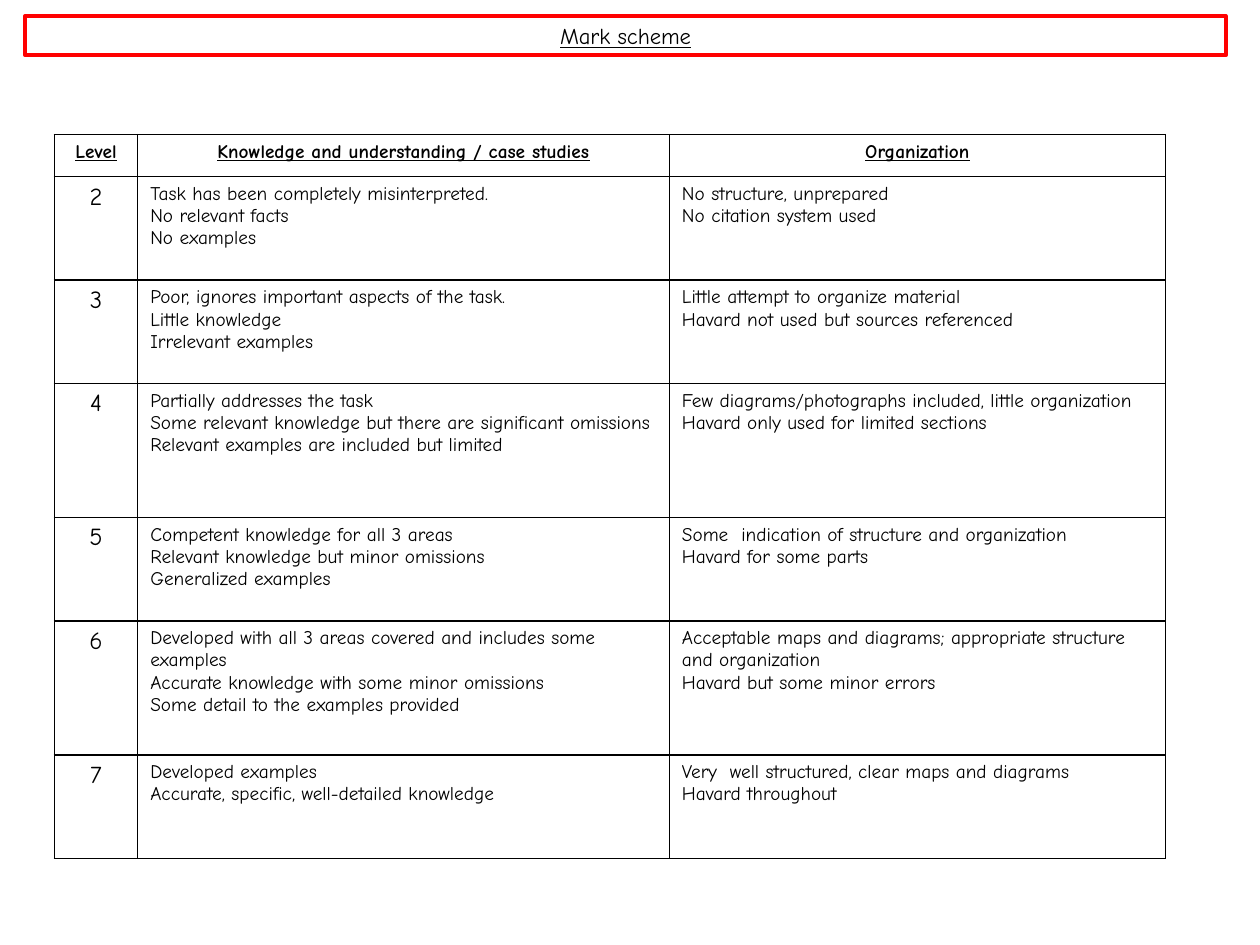
import dataclasses

import lxml.etree
import pptx
import pptx.dml.color
import pptx.enum.shapes
import pptx.enum.text
import pptx.oxml.ns
import pptx.slide
import pptx.table
import pptx.text.text
import pptx.util

Pt = pptx.util.Pt
Align = pptx.enum.text.PP_ALIGN


@dataclasses.dataclass(frozen=True)
class Theme:
    """Hold the colours, font and type sizes of the slide."""

    font: str = "Comic Neue"
    ink: str = "000000"
    frame: str = "FF0000"
    title_size: float = 12.9
    body_size: float = 11
    level_size: float = 14
    border_width: float = 1
    frame_width: float = 2.25


@dataclasses.dataclass(frozen=True)
class Band:
    """Describe one level of the mark scheme."""

    level: str
    height: float
    knowledge: tuple[str, ...]
    organization: tuple[str, ...]


THEME = Theme()
HEADINGS = ("Level", "Knowledge and understanding / case studies", "Organization")
COLUMN_WIDTHS = (47.7, 303.8, 283.5)
HEADING_HEIGHT = 24
SHORT, TALL = 59.1, 76.6
BANDS = (
    Band("2", SHORT,
         ("Task has been completely misinterpreted.", "No relevant facts", "No examples"),
         ("No structure, unprepared", "No citation system used")),
    Band("3", SHORT,
         ("Poor, ignores important aspects of the task.", "Little knowledge",
          "Irrelevant examples"),
         ("Little attempt to organize material", "Havard not used but sources referenced")),
    Band("4", TALL,
         ("Partially addresses the task",
          "Some relevant knowledge but there are significant omissions",
          "Relevant examples are included but limited"),
         ("Few diagrams/photographs included, little organization",
          "Havard only used for limited sections")),
    Band("5", SHORT,
         ("Competent knowledge for all 3 areas", "Relevant knowledge but minor omissions",
          "Generalized examples"),
         ("Some  indication of structure and organization", "Havard for some parts")),
    Band("6", TALL,
         ("Developed with all 3 areas covered and includes some examples",
          "Accurate knowledge with some minor omissions",
          "Some detail to the examples provided"),
         ("Acceptable maps and diagrams; appropriate structure and organization",
          "Havard but some minor errors")),
    Band("7", SHORT,
         ("Developed examples", "Accurate, specific, well-detailed knowledge"),
         ("Very  well structured, clear maps and diagrams", "Havard throughout")),
)


def write_text(frame: pptx.text.text.TextFrame, lines: tuple[str, ...], size: float,
               align: Align = Align.LEFT, bold: bool = False,
               underline: bool = False) -> None:
    """Write one formatted paragraph for each line."""
    frame.text = "\n".join(lines)
    for para in frame.paragraphs:
        para.alignment = align
        for span in para.runs:
            span.font.name = THEME.font
            span.font.size = Pt(size)
            span.font.bold = bold
            span.font.underline = underline
            span.font.color.rgb = pptx.dml.color.RGBColor.from_string(THEME.ink)


def style_cell(cell: pptx.table._Cell) -> None:
    """Clear the fill of a cell and rule its four sides."""
    properties = cell._tc.get_or_add_tcPr()
    qualified = pptx.oxml.ns.qn
    for side in ("a:lnL", "a:lnR", "a:lnT", "a:lnB"):
        line = lxml.etree.SubElement(properties, qualified(side),
                                     w=str(int(Pt(THEME.border_width))))
        fill = lxml.etree.SubElement(line, qualified("a:solidFill"))
        lxml.etree.SubElement(fill, qualified("a:srgbClr"), val=THEME.ink)
    cell.fill.background()


def draw_title(page: pptx.slide.Slide) -> None:
    """Draw the framed title across the top."""
    box = page.shapes.add_shape(pptx.enum.shapes.MSO_SHAPE.RECTANGLE,
                                Pt(14.4), Pt(9.2), Pt(686), Pt(22.5))
    box.shadow.inherit = False
    box.fill.background()
    box.line.color.rgb = pptx.dml.color.RGBColor.from_string(THEME.frame)
    box.line.width = Pt(THEME.frame_width)
    box.text_frame.vertical_anchor = pptx.enum.text.MSO_ANCHOR.MIDDLE
    write_text(box.text_frame, ("Mark scheme",), THEME.title_size, Align.CENTER,
               underline=True)


def draw_scheme(page: pptx.slide.Slide, bands: tuple[Band, ...]) -> None:
    """Draw the table of levels and their criteria."""
    heights = (HEADING_HEIGHT, *(band.height for band in bands))
    table = page.shapes.add_table(len(heights), len(COLUMN_WIDTHS), Pt(31), Pt(77),
                                  Pt(sum(COLUMN_WIDTHS)), Pt(sum(heights))).table
    table.first_row = table.horz_banding = False
    for column, width in zip(table.columns, COLUMN_WIDTHS):
        column.width = Pt(width)
    for row, height in zip(table.rows, heights):
        row.height = Pt(height)
    for cell in table.iter_cells():
        style_cell(cell)
    for column, heading in enumerate(HEADINGS):
        write_text(table.cell(0, column).text_frame, (heading,), THEME.body_size,
                   Align.CENTER, bold=True, underline=True)
    for row, band in enumerate(bands, start=1):
        write_text(table.cell(row, 0).text_frame, (band.level,), THEME.level_size,
                   Align.CENTER)
        write_text(table.cell(row, 1).text_frame, band.knowledge, THEME.body_size)
        write_text(table.cell(row, 2).text_frame, band.organization, THEME.body_size)


def main() -> None:
    """Build the slide and save the deck."""
    deck = pptx.Presentation()
    deck.slide_width, deck.slide_height = Pt(720), Pt(540)
    page = deck.slides.add_slide(deck.slide_layouts[6])
    draw_scheme(page, BANDS)
    draw_title(page)
    deck.save("out.pptx")


if __name__ == "__main__":
    main()
